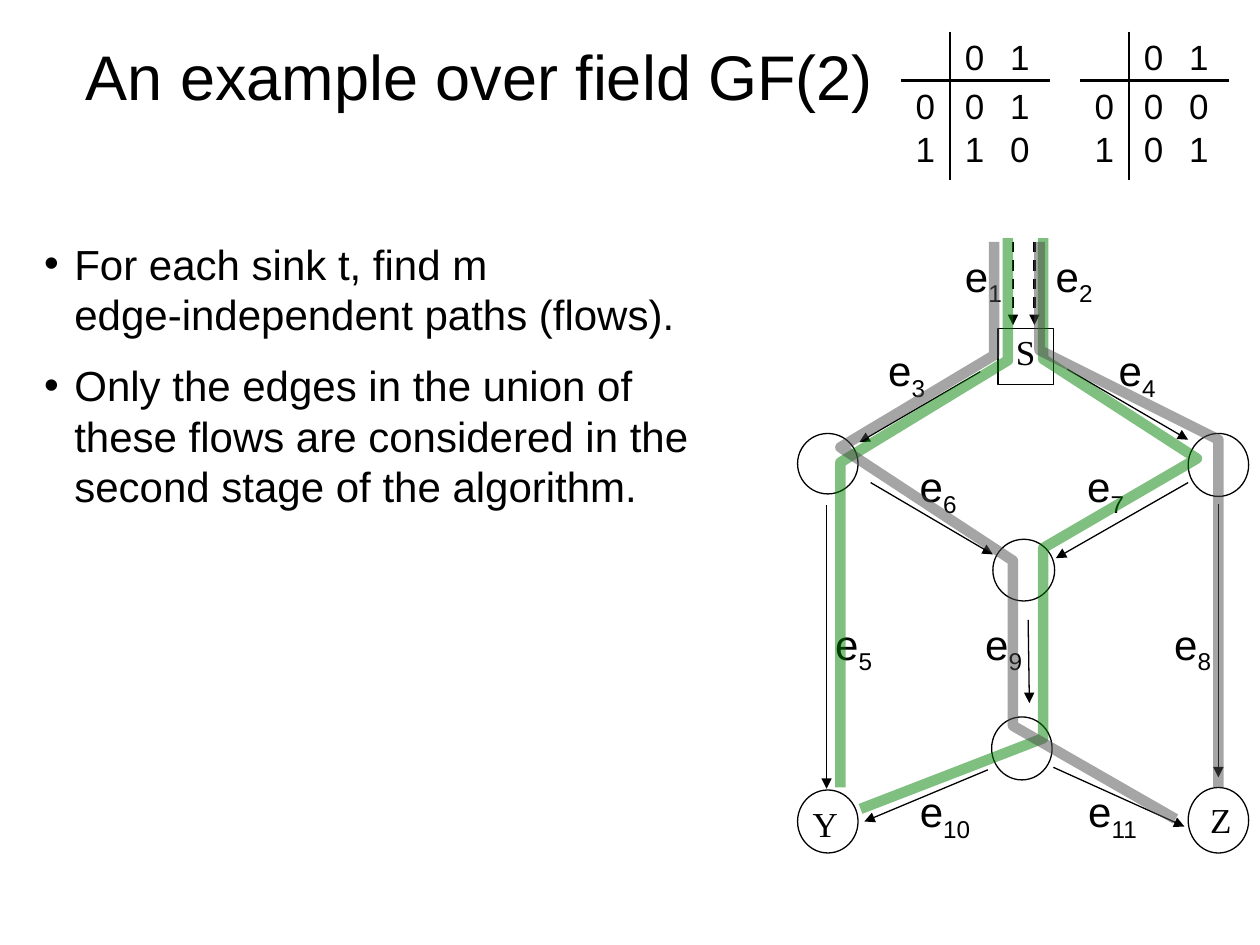
from dataclasses import dataclass

from lxml import etree
from pptx import Presentation
from pptx.dml.color import RGBColor
from pptx.enum.dml import MSO_LINE
from pptx.enum.shapes import MSO_CONNECTOR, MSO_SHAPE
from pptx.enum.text import MSO_ANCHOR, MSO_AUTO_SIZE, PP_ALIGN
from pptx.oxml.ns import qn
from pptx.util import Inches, Pt

OVAL = MSO_SHAPE.OVAL
RECT = MSO_SHAPE.RECTANGLE
STRAIGHT = MSO_CONNECTOR.STRAIGHT
DASH = MSO_LINE.DASH
MIDDLE = MSO_ANCHOR.MIDDLE
TOP = MSO_ANCHOR.TOP
LEFT = PP_ALIGN.LEFT
CENTER = PP_ALIGN.CENTER
GROW = MSO_AUTO_SIZE.SHAPE_TO_FIT_TEXT
FIXED = MSO_AUTO_SIZE.NONE


@dataclass(frozen=True)
class Theme:
    ink: RGBColor = RGBColor(0, 0, 0)
    green: RGBColor = RGBColor(0, 0x80, 0)
    gray: RGBColor = RGBColor(0x4D, 0x4D, 0x4D)
    sans: str = "Arial"
    serif: str = "Times New Roman"
    title: Pt = Pt(36)
    body: Pt = Pt(24)
    small: Pt = Pt(20)
    thin: Pt = Pt(0.75)
    bold: Pt = Pt(1.5)
    flow: Pt = Pt(6)


theme = Theme()


def write(shape, words, size, face=theme.sans, align=CENTER, anchor=MIDDLE, inset=0, sub=""):
    frame = shape.text_frame
    frame.word_wrap = True
    frame.auto_size = FIXED
    frame.vertical_anchor = anchor
    frame.margin_left = frame.margin_right = Inches(inset)
    frame.margin_top = frame.margin_bottom = Inches(inset)
    para = frame.paragraphs[0]
    para.alignment = align
    for part in filter(None, (words, sub)):
        run = para.add_run()
        run.text = part
        run.font.size = size
        run.font.name = face
        run.font.color.rgb = theme.ink
    if sub:
        run.font._element.set("baseline", "-25000")


def link(shapes, start, end, width=theme.thin, arrow=True, dash=None):
    line = shapes.add_connector(STRAIGHT, *map(Inches, start + end))
    line.line.color.rgb = theme.ink
    line.line.width = width
    if dash:
        line.line.dash_style = dash
    if arrow:
        etree.SubElement(line.get_or_add_ln(), qn("a:tailEnd"), type="triangle")
    etree.SubElement(line.element.spPr, qn("a:effectLst"))


deck = Presentation()
deck.slide_width = Inches(10)
deck.slide_height = Inches(7.5)
slide = deck.slides.add_slide(deck.slide_layouts[1])
shapes = slide.shapes

title = shapes.title
title.left, title.top, title.width, title.height = map(Inches, (0.58, 0.08, 9.33, 1.03))
write(title, "An example over field GF(2)", theme.title, align=LEFT, inset=0.1)

body = slide.placeholders[1]
body.left, body.top, body.width, body.height = map(Inches, (0.25, 1.84, 5.5, 2.32))
frame = body.text_frame
frame.auto_size = GROW
points = [
    ["For each sink t, find m ", "edge-independent paths (flows)."],
    ["Only the edges in the union of these flows are considered "
     "in the second stage of the algorithm."],
]
for i, lines in enumerate(points):
    para = frame.add_paragraph() if i else frame.paragraphs[0]
    para.space_before = Pt(12) if i else Pt(0)
    props = para._p.get_or_add_pPr()
    props.set("marL", str(Inches(0.24)))
    props.set("indent", str(Inches(-0.24)))
    etree.SubElement(props, qn("a:buChar"), char="•")
    for j, words in enumerate(lines):
        if j:
            para.add_line_break()
        run = para.add_run()
        run.text = words
        run.font.size = theme.body
        run.font.name = theme.sans
        run.font.color.rgb = theme.ink

nodes = [
    (OVAL, 6.33, 3.44, 0.48, 0.48),
    (OVAL, 9.43, 3.44, 0.48, 0.5),
    (OVAL, 7.88, 4.28, 0.49, 0.49),
    (OVAL, 6.33, 6.27, 0.48, 0.5),
    (OVAL, 9.43, 6.25, 0.48, 0.52),
    (OVAL, 7.87, 5.69, 0.48, 0.5),
    (RECT, 7.92, 2.61, 0.44, 0.44),
]
for kind, *box in nodes:
    node = shapes.add_shape(kind, *map(Inches, box))
    node.shadow.inherit = False
    node.fill.background()
    node.line.color.rgb = theme.ink
    node.line.width = theme.thin
write(node, "S", theme.small, theme.serif, anchor=TOP, inset=0.01)

for name, x, y in (("Y", 6.33, 6.36), ("Z", 9.47, 6.33)):
    sink = shapes.add_textbox(Inches(x), Inches(y), Inches(0.44), Inches(0.44))
    write(sink, name, theme.small, theme.serif, anchor=TOP, inset=0.01)

edges = [
    ((7.78, 2.95), (6.82, 3.51)),
    ((8.47, 2.93), (9.43, 3.49)),
    ((6.56, 4.01), (6.56, 6.26)),
    ((6.91, 3.83), (7.88, 4.4)),
    ((9.43, 3.83), (8.38, 4.43)),
    ((9.67, 4), (9.67, 6.17)),
    ((8.16, 4.92), (8.17, 5.58)),
    ((7.84, 6.11), (6.86, 6.52)),
    ((8.36, 6.09), (9.4, 6.56)),
]
for start, end in edges:
    link(shapes, start, end)
for x in (8.04, 8.21):
    link(shapes, (x, 1.92), (x, 2.58), theme.bold, dash=DASH)

cell = 0.39
cols = (0, 0.39, 0.75)
rows = (0.25, 0.64, 0.98)
for left, grid in ((7.15, (" 01", "001", "110")), (8.57, (" 01", "000", "101"))):
    group = shapes.add_group_shape().shapes
    link(group, (left, 0.64), (left + 1.18, 0.64), theme.bold, False)
    link(group, (left + cell, 0.25), (left + cell, 1.43), theme.bold, False)
    for y, row in zip(rows, grid):
        for x, digit in zip(cols, row):
            if digit != " ":
                box = group.add_textbox(*map(Inches, (left + x, y, cell, cell)))
                write(box, digit, theme.small)

labels = [
    (7.61, 2.02), (8.33, 2.02), (7, 2.77), (8.83, 2.77), (6.58, 4.94), (7.25, 3.69),
    (8.58, 3.69), (9.27, 4.94), (7.77, 4.94), (7.25, 6.27), (8.58, 6.27),
]
for i, (x, y) in enumerate(labels, 1):
    width = 0.5 if i > 9 else cell
    label = shapes.add_textbox(*map(Inches, (x, y, width, cell)))
    write(label, "e", theme.body, sub=str(i))

flows = [
    (theme.green, [(8, 1.89), (8, 2.86), (6.67, 3.67), (6.67, 6.25)]),
    (theme.green, [(8.28, 1.89), (8.28, 2.85), (9.5, 3.64), (8.28, 4.35),
                   (8.28, 5.86), (6.83, 6.42)]),
    (theme.gray, [(7.89, 1.92), (7.89, 2.82), (6.67, 3.55), (8.04, 4.45),
                  (8.04, 5.76), (9.33, 6.5)]),
    (theme.gray, [(8.25, 1.92), (8.25, 2.78), (9.67, 3.49), (9.67, 6.25)]),
]
for color, route in flows:
    spots = [(Inches(x), Inches(y)) for x, y in route]
    pen = shapes.build_freeform(*spots[0])
    pen.add_line_segments(spots[1:], close=False)
    flow = pen.convert_to_shape()
    flow.shadow.inherit = False
    flow.fill.background()
    flow.line.color.rgb = color
    flow.line.width = theme.flow
    tint = flow.get_or_add_ln().find(".//" + qn("a:srgbClr"))
    etree.SubElement(tint, qn("a:alpha"), val="50000")

deck.save("out.pptx")
